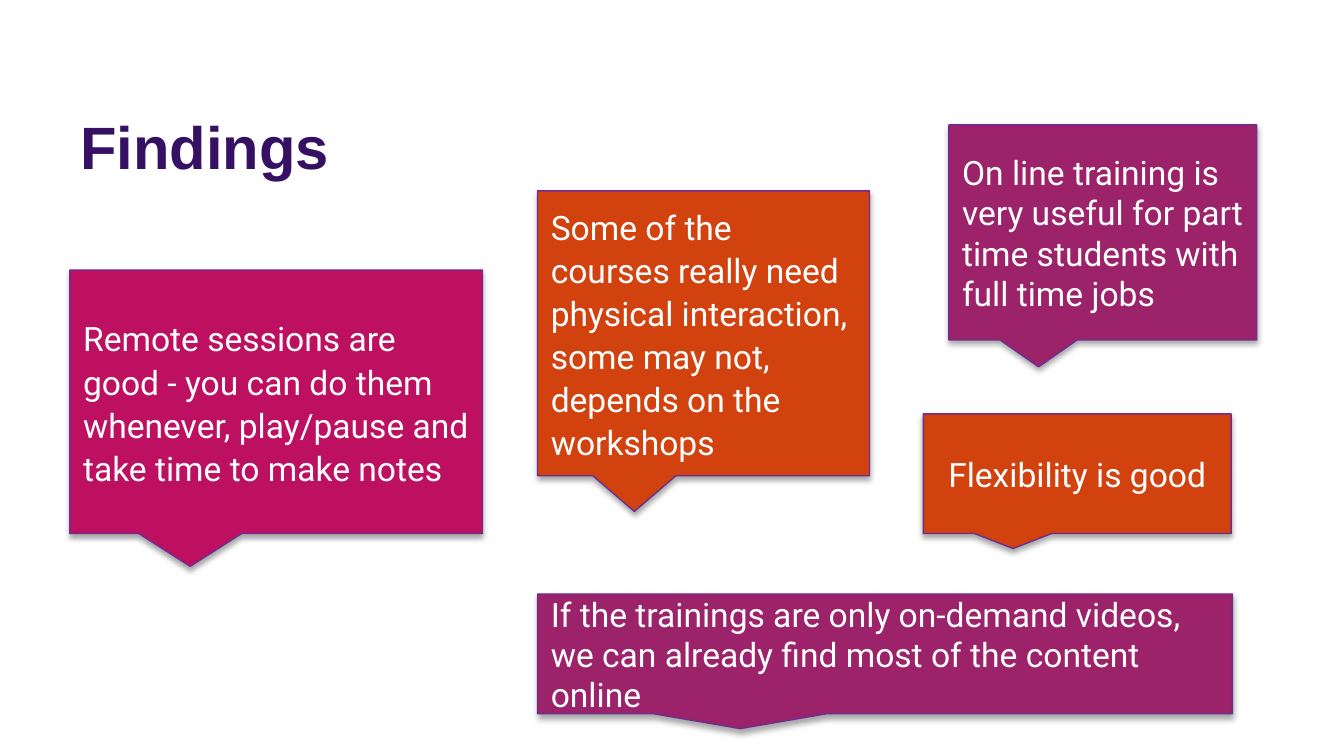
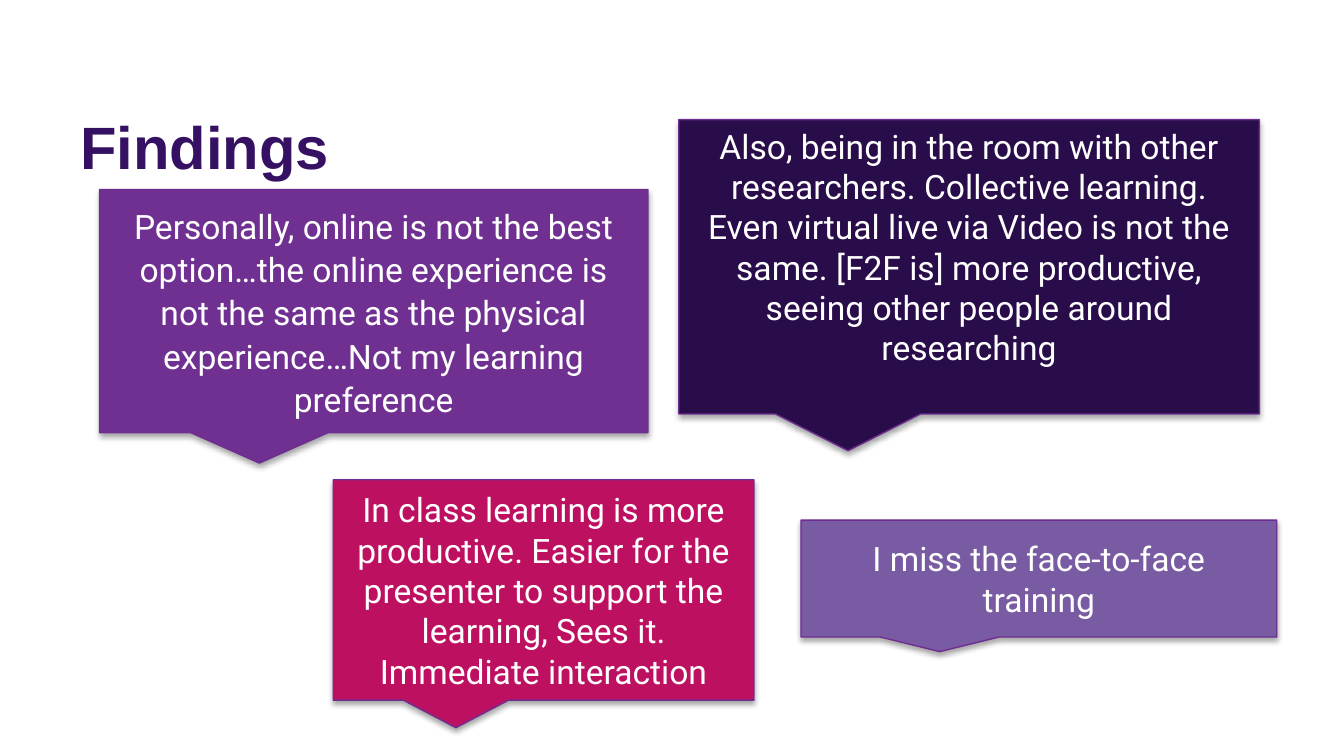
from dataclasses import dataclass

from lxml import etree
from pptx import Presentation
from pptx.dml.color import RGBColor
from pptx.enum.shapes import MSO_SHAPE
from pptx.enum.text import MSO_ANCHOR, PP_ALIGN
from pptx.oxml.ns import qn
from pptx.util import Inches, Pt

CALLOUT = MSO_SHAPE.RECTANGULAR_CALLOUT
MIDDLE = MSO_ANCHOR.MIDDLE
LEFT, CENTER = PP_ALIGN.LEFT, PP_ALIGN.CENTER


@dataclass(frozen=True)
class Theme:
    """Colours, fonts and sizes shared by the slides."""
    title: str = "361163"
    text: str = "FFFFFF"
    outline: str = "6D2D91"
    shadow: str = "000000"
    pink: str = "BD1061"
    orange: str = "D2420E"
    plum: str = "9C2369"
    purple: str = "6F3092"
    navy: str = "280D4A"
    lilac: str = "785BA3"
    title_font: str = "Arial"
    body_font: str = "Roboto"
    title_size: int = 32
    body_size: int = 18


@dataclass(frozen=True)
class Quote:
    """One quotation: its box in inches, fill, words and text layout."""
    box: tuple
    fill: str
    text: str
    align: PP_ALIGN = LEFT
    loose: bool = False
    lift: float = 0


T = Theme()
TITLE_BOX = (0.5, 0.75, 9, 0.67)

STUDENT_QUOTES = [
    Quote((0.52, 2.01, 3.07, 1.96), T.pink,
          "Remote sessions are good - you can do them whenever, "
          "play/pause and take time to make notes", loose=True),
    Quote((4, 1.42, 2.47, 2.12), T.orange,
          "Some of the courses really need physical interaction, "
          "some may not, depends on the workshops", loose=True),
    Quote((6.87, 3.08, 2.29, 0.89), T.orange, "Flexibility is good", CENTER),
    Quote((7.06, 0.93, 2.29, 1.6), T.plum,
          "On line training is very useful for part time students "
          "with full time jobs"),
    Quote((4, 4.42, 5.17, 0.89), T.plum,
          "If the trainings are only on-demand videos, we can already "
          "find most of the content online"),
]

IN_PERSON_QUOTES = [
    Quote((0.74, 1.41, 4.08, 1.81), T.purple,
          "Personally, online is not the best option…the online experience "
          "is not the same as the physical experience…Not my learning "
          "preference", CENTER, loose=True),
    Quote((5.05, 0.89, 4.32, 2.19), T.navy,
          "Also, being in the room with other researchers. Collective "
          "learning. Even virtual live via Video is not the same. [F2F is] "
          "more productive, seeing other people around researching",
          CENTER, lift=0.3),
    Quote((2.48, 3.57, 3.13, 1.64), T.pink,
          "In class learning is more productive. Easier for the presenter "
          "to support the learning, Sees it. Immediate interaction", CENTER),
    Quote((5.96, 3.87, 3.54, 0.87), T.lilac,
          "I miss the face-to-face training", CENTER),
]


def rgb(value):
    """Turn a hex string into a colour."""
    return RGBColor.from_string(value)


def write(sp, text, font, size, color, bold=False):
    """Set the text of a shape, centred vertically, and return its paragraph."""
    tf = sp.text_frame
    tf.word_wrap = True
    tf.vertical_anchor = MIDDLE
    p = tf.paragraphs[0]
    p.text = text
    f = p.runs[0].font
    f.name, f.size, f.bold = font, Pt(size), bold
    f.color.rgb = rgb(color)
    return p


def add_shadow(sp):
    """Give a shape a soft shadow that falls straight down."""
    sp.shadow.inherit = False
    effects = sp._element.spPr.find(qn("a:effectLst"))
    outer = etree.SubElement(effects, qn("a:outerShdw"), blurRad=str(Pt(3.1)),
                             dist=str(Pt(1.8)), dir="5400000",
                             rotWithShape="0")
    color = etree.SubElement(outer, qn("a:srgbClr"), val=T.shadow)
    etree.SubElement(color, qn("a:alpha"), val="35000")


def add_title(s, text, box):
    """Place the slide title in its box."""
    sp = s.shapes.add_textbox(*map(Inches, box))
    write(sp, text, T.title_font, T.title_size, T.title, bold=True)


def add_callout(s, quote):
    """Place one quotation in a speech callout."""
    sp = s.shapes.add_shape(CALLOUT, *map(Inches, quote.box))
    sp.fill.solid()
    sp.fill.fore_color.rgb = rgb(quote.fill)
    sp.line.color.rgb = rgb(T.outline)
    sp.line.width = Pt(0.75)
    add_shadow(sp)
    p = write(sp, quote.text, T.body_font, T.body_size, T.text)
    p.alignment = quote.align
    sp.text_frame.margin_bottom = Inches(0.05 + quote.lift)
    if quote.loose:
        p.line_spacing = 1.07
        p.space_after = Pt(8)


def add_findings(prs, quotes):
    """Add a findings slide with its quotations."""
    s = prs.slides.add_slide(prs.slide_layouts[6])
    add_title(s, "Findings", TITLE_BOX)
    for quote in quotes:
        add_callout(s, quote)


def main():
    """Build and save the presentation."""
    prs = Presentation()
    prs.slide_width = Inches(10)
    prs.slide_height = Inches(10 * 9 / 16)
    for quotes in (STUDENT_QUOTES, IN_PERSON_QUOTES):
        add_findings(prs, quotes)
    prs.save("out.pptx")


if __name__ == "__main__":
    main()
